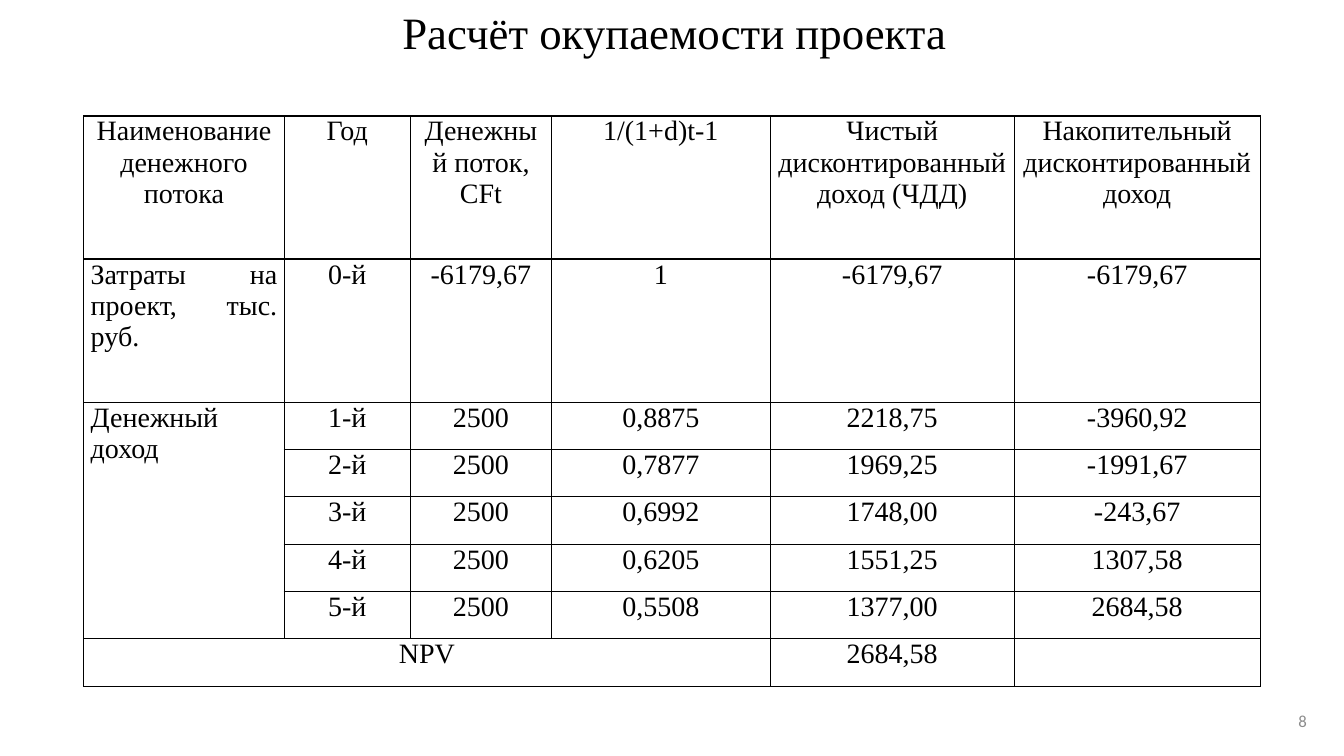
from lxml import etree
from pptx import Presentation
from pptx.dml.color import RGBColor
from pptx.enum.text import MSO_ANCHOR, PP_ALIGN
from pptx.oxml.ns import qn
from pptx.util import Inches, Pt

CENTER, JUSTIFY, RIGHT = PP_ALIGN.CENTER, PP_ALIGN.JUSTIFY, PP_ALIGN.RIGHT
TOP, MIDDLE = MSO_ANCHOR.TOP, MSO_ANCHOR.MIDDLE
SERIF, SANS = "Times New Roman", "Calibri"
BLACK, GRAY = "000000", "8C8C8C"

COLUMN_WIDTHS = [1.99, 1.25, 1.4, 2.17, 2.42, 2.44]
ROW_HEIGHTS = [1.42] * 2 + [0.47] * 6
PAYBACK = [
    ["Наименование денежного потока", "Год", "Денежный поток, CFt", "1/(1+d)t-1",
     "Чистый дисконтированный доход (ЧДД)", "Накопительный дисконтированный доход"],
    ["Затраты на проект, тыс. руб.", "0-й", "-6179,67", "1", "-6179,67", "-6179,67"],
    ["Денежный доход", "1-й", "2500", "0,8875", "2218,75", "-3960,92"],
    ["", "2-й", "2500", "0,7877", "1969,25", "-1991,67"],
    ["", "3-й", "2500", "0,6992", "1748,00", "-243,67"],
    ["", "4-й", "2500", "0,6205", "1551,25", "1307,58"],
    ["", "5-й", "2500", "0,5508", "1377,00", "2684,58"],
    ["NPV", "", "", "", "2684,58", ""],
]


def color(value):
    """Turn a hex string into a colour."""
    return RGBColor.from_string(value)


def style_paragraph(paragraph, size, typeface, ink, align):
    """Set the alignment and font of a paragraph."""
    paragraph.alignment = align
    font = paragraph.font
    font.size, font.name = Pt(size), typeface
    font.color.rgb = color(ink)
    for run in paragraph.runs:
        run.font.size, run.font.name = Pt(size), typeface
        run.font.color.rgb = color(ink)


def add_label(slide, box, text, size, typeface, ink, align, anchor, wrap):
    """Place a single line of text in the given box."""
    frame = slide.shapes.add_textbox(*map(Inches, box)).text_frame
    frame.word_wrap = wrap
    frame.vertical_anchor = anchor
    frame.text = text
    style_paragraph(frame.paragraphs[0], size, typeface, ink, align)


def outline_cell(cell, ink, width):
    """Draw all four borders of a table cell."""
    properties = cell._tc.get_or_add_tcPr()
    for position, side in enumerate(("lnL", "lnR", "lnT", "lnB")):
        border = etree.Element(qn(f"a:{side}"), w=str(Pt(width)))
        fill = etree.SubElement(border, qn("a:solidFill"))
        etree.SubElement(fill, qn("a:srgbClr"), val=ink)
        properties.insert(position, border)


def add_payback_table(slide, box):
    """Place the payback calculation table in the given box."""
    table = slide.shapes.add_table(
        len(PAYBACK), len(COLUMN_WIDTHS), *map(Inches, box)).table
    table.first_row = table.horz_banding = False
    for column, width in zip(table.columns, COLUMN_WIDTHS):
        column.width = Inches(width)
    for row, height in zip(table.rows, ROW_HEIGHTS):
        row.height = Inches(height)
    for row_index, values in enumerate(PAYBACK):
        for column_index, value in enumerate(values):
            cell = table.cell(row_index, column_index)
            cell.margin_left = cell.margin_right = Inches(0.07)
            cell.margin_top = cell.margin_bottom = 0
            cell.text = value
            is_flow_name = column_index == 0 and row_index in (1, 2)
            style_paragraph(cell.text_frame.paragraphs[0], 20, SERIF, BLACK,
                            JUSTIFY if is_flow_name else CENTER)
            cell.fill.background()
            outline_cell(cell, BLACK, 1)
    table.cell(2, 0).merge(table.cell(6, 0))
    table.cell(7, 0).merge(table.cell(7, 3))


def main():
    """Build and save the payback slide."""
    deck = Presentation()
    deck.slide_width, deck.slide_height = Inches(13.33), Inches(7.5)
    slide = deck.slides.add_slide(deck.slide_layouts[6])
    add_label(slide, (3.87, 0, 5.64, 0.64), "Расчёт окупаемости проекта",
              32, SERIF, BLACK, CENTER, TOP, False)
    add_payback_table(slide, (0.83, 1.15, sum(COLUMN_WIDTHS), sum(ROW_HEIGHTS)))
    add_label(slide, (9.42, 6.95, 3.64, 0.4), "8",
              12, SANS, GRAY, RIGHT, MIDDLE, True)
    deck.save("out.pptx")


if __name__ == "__main__":
    main()
